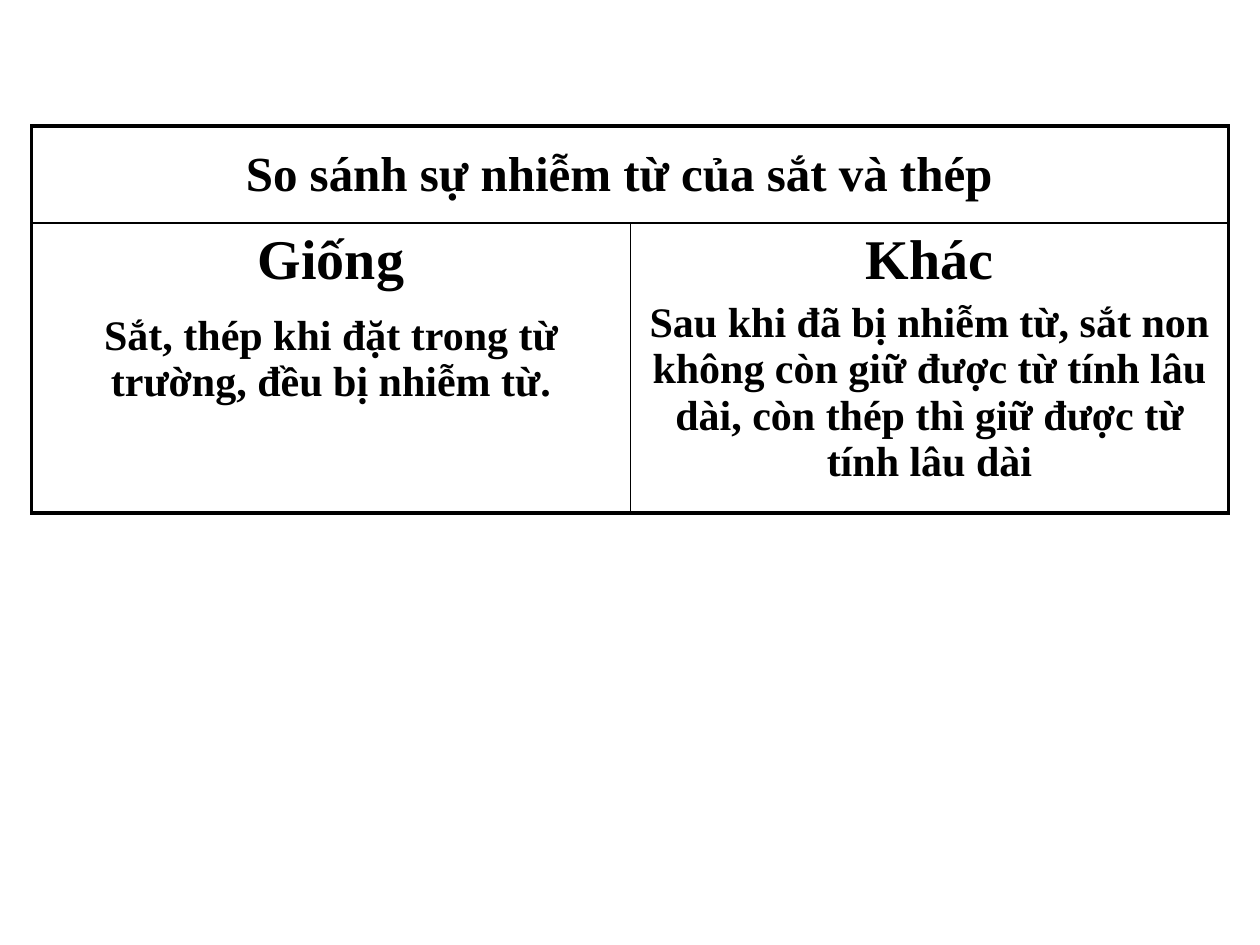
from lxml import etree
from pptx import Presentation
from pptx import util as u
from pptx.dml.color import RGBColor
from pptx.enum import text
from pptx.oxml.ns import qn

BLACK = "000000"
OUTER, INNER = 2.25, 1


def style(paragraph, size):
    paragraph.alignment = text.PP_ALIGN.CENTER
    font = paragraph.font
    font.name, font.size, font.bold = "Times New Roman", u.Pt(size), True
    font.color.rgb = RGBColor.from_string(BLACK)


def set_borders(cell, **widths):
    properties = cell._tc.get_or_add_tcPr()
    for side in "LRTB":
        line = etree.SubElement(properties, qn(f"a:ln{side}"), w=str(u.Pt(widths[side])))
        fill = etree.SubElement(line, qn("a:solidFill"))
        etree.SubElement(fill, qn("a:srgbClr"), val=BLACK)


prs = Presentation()
prs.slide_width, prs.slide_height = u.Cm(25.4), u.Cm(19.05)
slide = prs.slides.add_slide(prs.slide_layouts[5])

# Title, lying over the header row of the table
title = slide.shapes.title
title.left, title.top = u.Cm(2.74), u.Cm(2.74)
title.width, title.height = u.Cm(19.48), u.Cm(1.45)
title.text_frame.text = "So sánh sự nhiễm từ của sắt và thép"
title.text_frame.word_wrap = True
title.text_frame.auto_size = text.MSO_AUTO_SIZE.SHAPE_TO_FIT_TEXT
title.text_frame.vertical_anchor = text.MSO_ANCHOR.TOP
style(title.text_frame.paragraphs[0], 28)

# Comparison table
comparison = slide.shapes.add_table(
    2, 2, u.Cm(0.64), u.Cm(2.54), u.Cm(24.13), u.Cm(6.94)).table
comparison.horz_banding = comparison.first_row = False
comparison.rows[0].height, comparison.rows[1].height = u.Cm(1.96), u.Cm(4.98)
comparison.cell(0, 0).merge(comparison.cell(0, 1))

# Thick frame, thin inner lines, no fill
for row in range(2):
    for column in range(2):
        cell = comparison.cell(row, column)
        set_borders(cell,
                    L=INNER if column else OUTER, R=OUTER if column or not row else INNER,
                    T=INNER if row else OUTER, B=OUTER if row else INNER)
        cell.fill.background()

# Heading, statement and the gap between them, one per column
sides = [
    ("Giống", "Sắt, thép khi đặt trong từ trường, đều bị nhiễm từ.", 12),
    ("Khác", "Sau khi đã bị nhiễm từ, sắt non không còn giữ được từ tính lâu dài, "
             "còn thép thì giữ được từ tính lâu dài", 4.8),
]
for column, (heading, statement, gap) in enumerate(sides):
    frame = comparison.cell(1, column).text_frame
    frame.text = f"{heading}\n{statement}"
    for paragraph, size in zip(frame.paragraphs, (32, 24)):
        style(paragraph, size)
    frame.paragraphs[1].space_before = u.Pt(gap)

prs.save("out.pptx")
